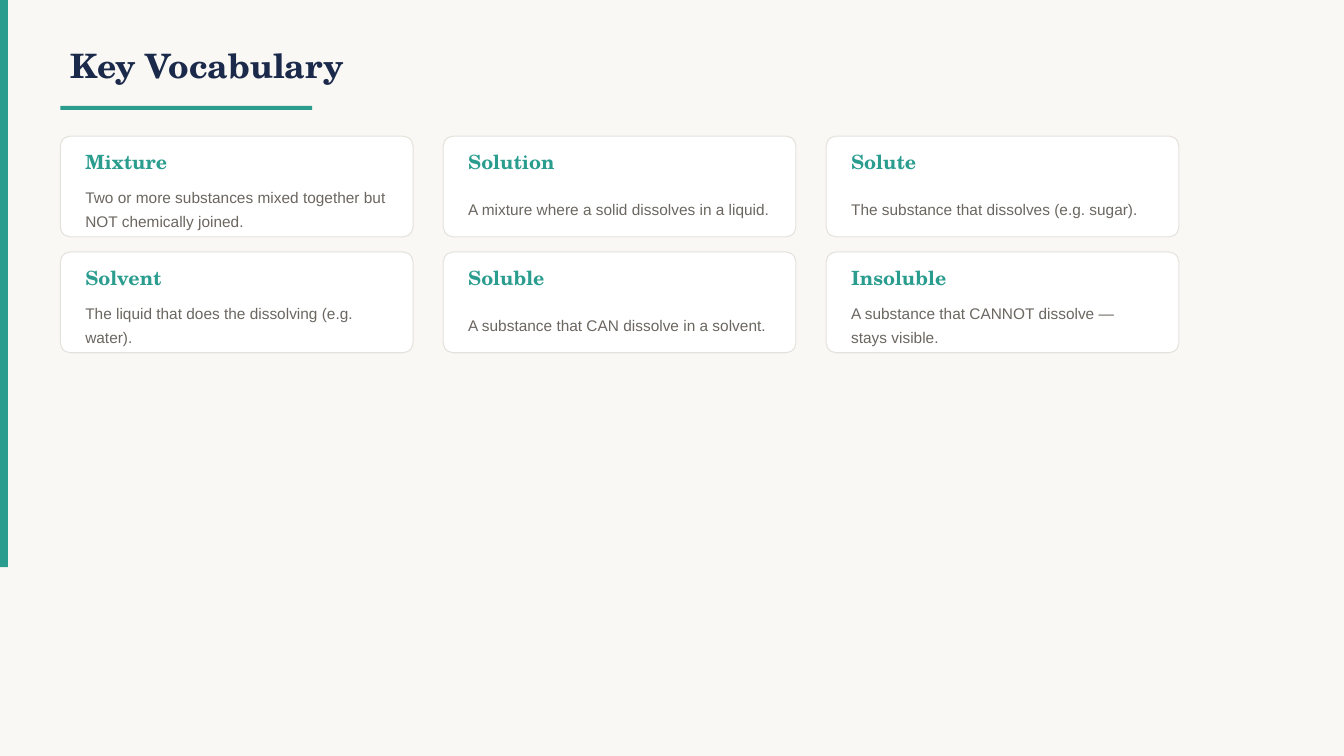
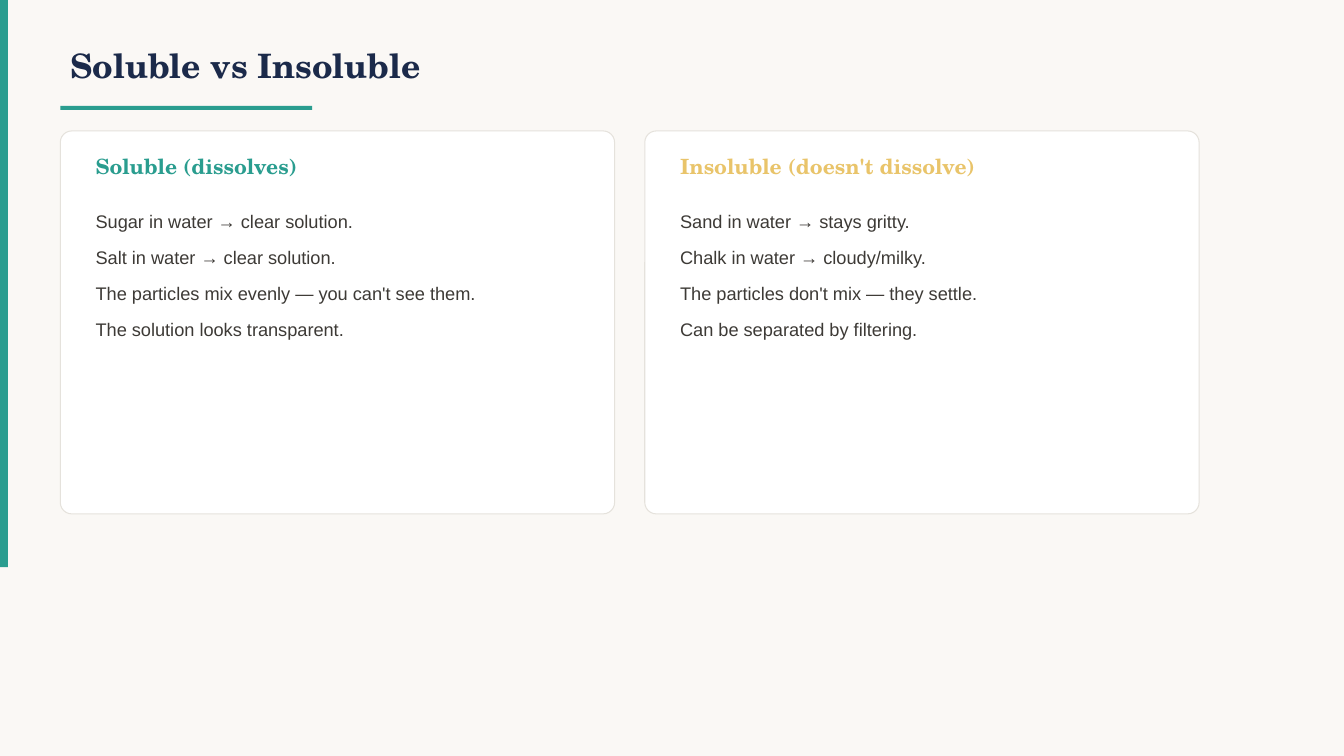
from pptx import Presentation
from pptx.dml.color import RGBColor
from pptx.enum.shapes import MSO_SHAPE
from pptx.enum.text import MSO_ANCHOR, MSO_AUTO_SIZE, PP_ALIGN
from pptx.util import Cm, Pt

RECT, ROUND = MSO_SHAPE.RECTANGLE, MSO_SHAPE.ROUNDED_RECTANGLE
TOP, MID = MSO_ANCHOR.TOP, MSO_ANCHOR.MIDDLE
LEFT, FIXED = PP_ALIGN.LEFT, MSO_AUTO_SIZE.NONE

# Shared look
HUES = {"paper": "FAF8F5", "teal": "2A9D8F", "navy": "1B2A4A", "white": "FFFFFF",
        "edge": "E5E2DC", "grey": "6B6660", "ink": "3D3A36", "gold": "E9C46A"}
SERIF, SANS = "TeX Gyre Schola", "Arial"
FONTS = {
    "title": {"name": SERIF, "size": Pt(24), "bold": True},
    "term": {"name": SERIF, "size": Pt(14), "bold": True},
    "note": {"name": SANS, "size": Pt(11), "bold": False},
    "head": {"name": SERIF, "size": Pt(15), "bold": True},
    "item": {"name": SANS, "size": Pt(13), "bold": False},
}
PARAS = {
    "note": {"line_spacing": 1.3},
    "item": {"line_spacing": 1.4, "space_after": Pt(4)},
}


def block(slide, kind, x, y, w, h, fill, edge=None):
    shape = slide.shapes.add_shape(kind, Cm(x), Cm(y), Cm(w), Cm(h))
    shape.shadow.inherit = False
    shape.fill.solid()
    shape.fill.fore_color.rgb = RGBColor.from_string(HUES[fill])
    if edge:
        shape.line.color.rgb = RGBColor.from_string(HUES[edge])
        shape.line.width = Pt(0.75)
    else:
        shape.line.fill.background()
    return shape


def write(shape, lines, style, hue, anchor=MID):
    frame = shape.text_frame
    frame.word_wrap = True
    frame.auto_size = FIXED
    frame.vertical_anchor = anchor
    frame.text = "\n".join(lines)
    for para in frame.paragraphs:
        para.alignment = LEFT
        for key, value in PARAS.get(style, {}).items():
            setattr(para, key, value)
        for key, value in FONTS[style].items():
            setattr(para.font, key, value)
        para.font.color.rgb = RGBColor.from_string(HUES[hue])


# Content: each card is heading, heading colour, lines
TERMS = [
    ("Mixture", "teal", ["Two or more substances mixed together but NOT chemically joined."]),
    ("Solution", "teal", ["A mixture where a solid dissolves in a liquid."]),
    ("Solute", "teal", ["The substance that dissolves (e.g. sugar)."]),
    ("Solvent", "teal", ["The liquid that does the dissolving (e.g. water)."]),
    ("Soluble", "teal", ["A substance that CAN dissolve in a solvent."]),
    ("Insoluble", "teal", ["A substance that CANNOT dissolve — stays visible."]),
]
SIDES = [
    ("Soluble (dissolves)", "teal", [
        "Sugar in water → clear solution.",
        "Salt in water → clear solution.",
        "The particles mix evenly — you can't see them.",
        "The solution looks transparent."]),
    ("Insoluble (doesn't dissolve)", "gold", [
        "Sand in water → stays gritty.",
        "Chalk in water → cloudy/milky.",
        "The particles don't mix — they settle.",
        "Can be separated by filtering."]),
]

# Card grids in cm; head and body are x, y, width, height inside the card
EDGE, GAP = 1.52, 0.76
SMALL = {"cols": 3, "top": 3.43, "size": (8.89, 2.54), "row": 2.92, "round": 0.1,
         "head": (0.38, 0.2, 8.13, 0.89), "body": (0.38, 1.14, 8.13, 1.27),
         "fonts": ("term", "note"), "hue": "grey", "anchor": MID}
LARGE = {"cols": 2, "top": 3.3, "size": (13.97, 9.65), "row": 0, "round": 0.03,
         "head": (0.64, 0.38, 12.7, 1.02), "body": (0.64, 1.65, 12.7, 7.37),
         "fonts": ("head", "item"), "hue": "ink", "anchor": TOP}
PAGES = [("Key Vocabulary", TERMS, SMALL), ("Soluble vs Insoluble", SIDES, LARGE)]

deck = Presentation()
deck.slide_width, deck.slide_height = Cm(33.87), Cm(19.05)
back = deck.slide_master.background.fill
back.solid()
back.fore_color.rgb = RGBColor.from_string(HUES["paper"])

for name, cards, grid in PAGES:
    slide = deck.slides.add_slide(deck.slide_layouts[5])

    # Side band, title and rule
    block(slide, RECT, 0, 0, 0.2, 14.29, "teal")
    title = slide.shapes.title
    title.left, title.top = Cm(EDGE), Cm(0.76)
    title.width, title.height = Cm(25.4), Cm(1.78)
    write(title, [name], "title", "navy")
    block(slide, RECT, EDGE, 2.67, 6.35, 0.1, "teal")

    # Cards
    wide, high = grid["size"]
    for i, (head, hue, lines) in enumerate(cards):
        row, col = divmod(i, grid["cols"])
        x = EDGE + col * (wide + GAP)
        y = grid["top"] + row * grid["row"]
        card = block(slide, ROUND, x, y, wide, high, "white", "edge")
        card.adjustments[0] = grid["round"]
        parts = [(grid["head"], [head], grid["fonts"][0], hue, MID),
                 (grid["body"], lines, grid["fonts"][1], grid["hue"], grid["anchor"])]
        for (dx, dy, w, h), words, style, tint, anchor in parts:
            area = slide.shapes.add_textbox(Cm(x + dx), Cm(y + dy), Cm(w), Cm(h))
            write(area, words, style, tint, anchor)

deck.save("out.pptx")
